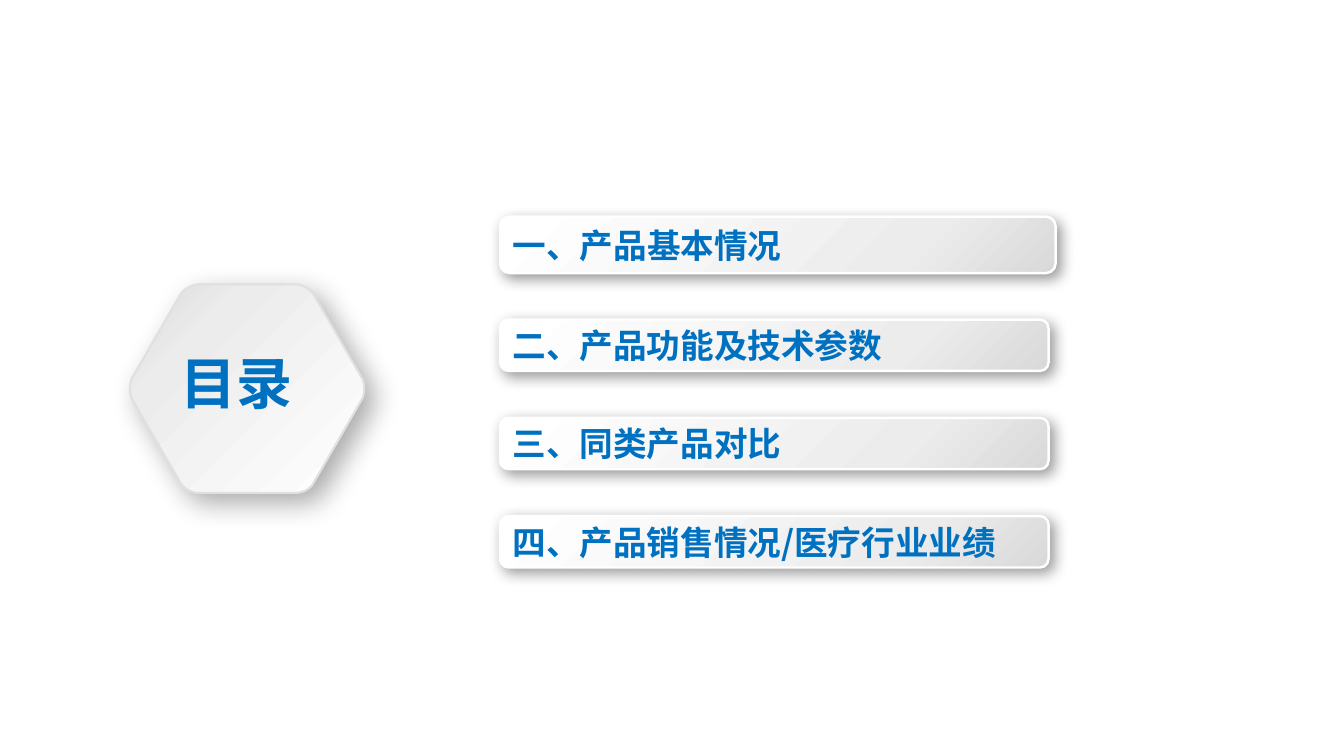
from lxml import etree
from pptx import Presentation
from pptx.dml.color import RGBColor
from pptx.enum.shapes import MSO_SHAPE
from pptx.enum.text import MSO_ANCHOR, PP_ALIGN
from pptx.oxml.ns import qn
from pptx.util import Inches, Pt

ROUNDED = MSO_SHAPE.ROUNDED_RECTANGLE
MIDDLE = MSO_ANCHOR.MIDDLE
CENTER, LEFT = PP_ALIGN.CENTER, PP_ALIGN.LEFT
FONT = "Noto Sans CJK SC"
BLUE = RGBColor(0x00, 0x70, 0xC0)
WHITE = RGBColor(0xFF, 0xFF, 0xFF)
PALE = RGBColor(0xEC, 0xEC, 0xEC)
SILVER = RGBColor(0xD9, 0xD9, 0xD9)
RIM = RGBColor(0xE0, 0xE0, 0xE0)
BLACK = RGBColor(0, 0, 0)


def style_plate(plate, first_stop, rim, rim_width, opacity, blur, distance):
    """Give a plate its grey gradient, rim and soft shadow."""
    plate.fill.gradient()
    plate.fill.gradient_angle = 315
    stops = plate._element.spPr.find(qn("a:gradFill")).find(qn("a:gsLst"))
    for stop in list(stops):
        stops.remove(stop)
    for position, color in ((first_stop, WHITE), (73, PALE), (100, SILVER)):
        stop = etree.SubElement(stops, qn("a:gs"), pos=str(position * 1000))
        etree.SubElement(stop, qn("a:srgbClr"), val=str(color))
    plate.line.color.rgb = rim
    plate.line.width = Pt(rim_width)
    plate.shadow.inherit = False
    effects = plate._element.spPr.find(qn("a:effectLst"))
    shadow = etree.SubElement(
        effects, qn("a:outerShdw"), blurRad=str(Pt(blur)), dist=str(Pt(distance)),
        dir=str(45 * 60000), algn="tl", rotWithShape="0")
    tint = etree.SubElement(shadow, qn("a:srgbClr"), val=str(BLACK))
    etree.SubElement(tint, qn("a:alpha"), val=str(opacity * 1000))


def write(frame, text, size, align):
    frame.word_wrap = True
    paragraph = frame.paragraphs[0]
    paragraph.text = text
    paragraph.alignment = align
    font = paragraph.font
    font.name, font.size, font.bold = FONT, Pt(size), True
    font.color.rgb = BLUE
    # East Asian typeface
    etree.SubElement(font._element, qn("a:ea"), typeface=FONT)


prs = Presentation()
prs.slide_width, prs.slide_height = Inches(13.33), Inches(7.5)
slide = prs.slides.add_slide(prs.slide_layouts[6])

# Hexagon with rounded corners, each a cubic curve
CORNERS = [
    ((2.93, 2.82), (2.99, 2.82), (3.08, 2.86), (3.11, 2.92)),
    ((3.59, 3.75), (3.62, 3.81), (3.62, 3.90), (3.59, 3.96)),
    ((3.11, 4.79), (3.08, 4.84), (2.99, 4.89), (2.93, 4.89)),
    ((1.97, 4.89), (1.90, 4.89), (1.82, 4.84), (1.79, 4.79)),
    ((1.31, 3.96), (1.28, 3.90), (1.28, 3.81), (1.31, 3.75)),
    ((1.79, 2.92), (1.82, 2.86), (1.90, 2.82), (1.97, 2.82)),
]
STEPS = 10
outline = []
for corner in CORNERS:
    for step in range(STEPS + 1):
        t = step / STEPS
        weights = ((1 - t) ** 3, 3 * t * (1 - t) ** 2, 3 * t * t * (1 - t), t ** 3)
        outline.append(tuple(
            Inches(sum(w * point[axis] for w, point in zip(weights, corner)))
            for axis in (0, 1)))

badge = slide.shapes.add_group_shape()
builder = badge.shapes.build_freeform(*outline[0])
builder.add_line_segments(outline[1:], close=True)
hexagon = builder.convert_to_shape()
hexagon.rotation = 180
style_plate(hexagon, 0, RIM, 1.5, 32, 20, 9)

# Contents title
title = badge.shapes.add_textbox(Inches(1.37), Inches(3.41), Inches(1.96), Inches(0.77))
write(title.text_frame, "目录", 40, CENTER)

# Chapter bars: the first is slightly larger, the rest are evenly spaced
CHAPTERS = ["一、产品基本情况", "二、产品功能及技术参数", "三、同类产品对比", "四、产品销售情况/医疗行业业绩"]
for index, chapter in enumerate(CHAPTERS):
    if index == 0:
        top, width, height = 2.15, 5.51, 0.56
    else:
        top, width, height = 3.17 + 0.975 * (index - 1), 5.44, 0.51
    bar = slide.shapes.add_shape(
        ROUNDED, Inches(4.96), Inches(top), Inches(width), Inches(height))
    style_plate(bar, 3, WHITE, 1.75, 40, 10, 4)
    bar.text_frame.vertical_anchor = MIDDLE
    write(bar.text_frame, chapter, 24, LEFT)

prs.save("out.pptx")
